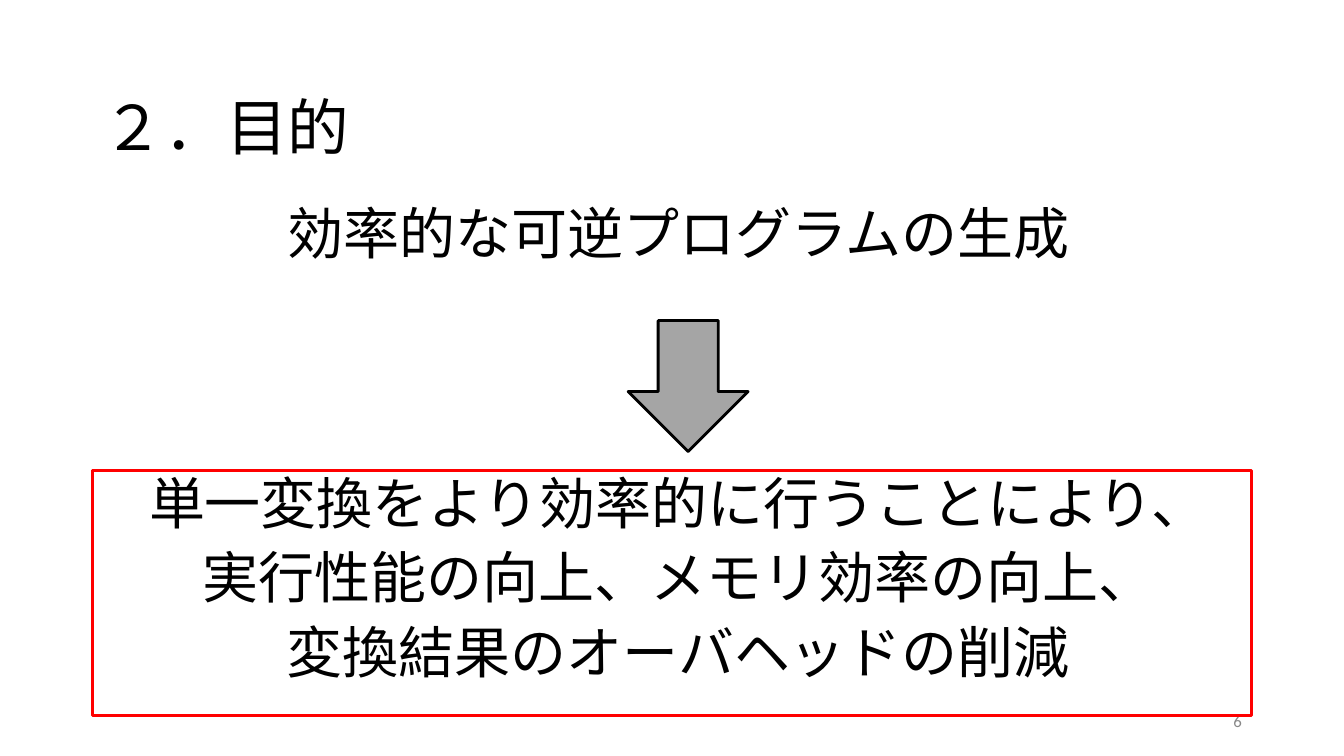
"""Build the purpose slide: a goal, an arrow and the means in a red frame."""
from pptx import Presentation
from pptx import util as u
from pptx.dml.color import RGBColor
from pptx.enum import shapes, text

BLACK = RGBColor(0x00, 0x00, 0x00)
RED = RGBColor(0xFF, 0x00, 0x00)
GREY = RGBColor(0xA5, 0xA5, 0xA5)
PALE = RGBColor(0x88, 0x88, 0x88)
WIDTH, HEIGHT = u.Inches(13.33), u.Inches(7.5)
LEFT, SPAN = 6.9, 86.25

TITLE = {"size": u.Pt(44), "color": BLACK, "indent": 0,
         "layout": {"alignment": text.PP_ALIGN.LEFT, "line_spacing": 0.9}}
STATEMENT = {"size": u.Pt(40), "color": BLACK, "indent": u.Inches(0.12),
             "layout": {"alignment": text.PP_ALIGN.CENTER, "line_spacing": 0.9,
                        "space_before": u.Pt(10)}}
NUMBER = {"size": u.Pt(12), "color": PALE, "indent": 0,
          "layout": {"alignment": text.PP_ALIGN.RIGHT}}


def area(left, top, width, height):
    """Turn percentages of the slide into a position and size."""
    return (int(WIDTH * left / 100), int(HEIGHT * top / 100),
            int(WIDTH * width / 100), int(HEIGHT * height / 100))


def write(frame, lines, style, anchor):
    """Fill a text frame with one styled paragraph per line."""
    settings = {"word_wrap": True, "auto_size": text.MSO_AUTO_SIZE.NONE,
                "vertical_anchor": anchor}
    for name, value in settings.items():
        setattr(frame, name, value)
    for index, line in enumerate(lines):
        paragraph = frame.paragraphs[0] if index == 0 else frame.add_paragraph()
        for name, value in style["layout"].items():
            setattr(paragraph, name, value)
        if style["indent"]:
            properties = paragraph._p.get_or_add_pPr()
            properties.set("marL", str(style["indent"]))
            properties.set("indent", "0")
        run = paragraph.add_run()
        run.text = line
        for name, value in {"name": "Calibri", "size": style["size"]}.items():
            setattr(run.font, name, value)
        run.font.color.rgb = style["color"]


def add_title(slide, wording, place):
    """Place and format the title placeholder."""
    heading = slide.shapes.title
    for name, value in zip(("left", "top", "width", "height"), area(*place)):
        setattr(heading, name, value)
    write(heading.text_frame, [wording], TITLE, text.MSO_ANCHOR.MIDDLE)


def add_label(slide, wording, place, style, anchor):
    """Add a text box holding a single line."""
    label = slide.shapes.add_textbox(*area(*place))
    write(label.text_frame, [wording], style, anchor)


def add_outlined(slide, kind, place, line_color, line_width, fill=None):
    """Add a preset shape with an outline and an optional fill."""
    outlined = slide.shapes.add_shape(kind, *area(*place))
    outlined.shadow.inherit = False
    if fill is None:
        outlined.fill.background()
    else:
        outlined.fill.solid()
        outlined.fill.fore_color.rgb = fill
    outlined.line.color.rgb = line_color
    outlined.line.width = u.Pt(line_width)
    return outlined


def main():
    """Assemble and save the slide."""
    deck = Presentation()
    deck.slide_width, deck.slide_height = WIDTH, HEIGHT
    slide = deck.slides.add_slide(deck.slide_layouts[5])
    add_title(slide, "２．目的", (LEFT, 7.6, SPAN, 19.33))
    add_label(slide, "効率的な可逆プログラムの生成", (LEFT, 26.67, SPAN, 11.07),
              STATEMENT, text.MSO_ANCHOR.TOP)
    add_label(slide, "6", (70.65, 92.67, 22.5, 5.33), NUMBER,
              text.MSO_ANCHOR.MIDDLE)
    add_outlined(slide, shapes.MSO_SHAPE.DOWN_ARROW, (46.74, 42.4, 8.93, 17.33),
                 BLACK, 2, GREY)
    means = add_outlined(slide, shapes.MSO_SHAPE.RECTANGLE,
                         (LEFT, 62.27, SPAN, 32.4), RED, 2.25)
    write(means.text_frame,
          ["単一変換をより効率的に行うことにより、",
           "実行性能の向上、メモリ効率の向上、",
           "変換結果のオーバヘッドの削減"],
          STATEMENT, text.MSO_ANCHOR.TOP)
    deck.save("out.pptx")


if __name__ == "__main__":
    main()
